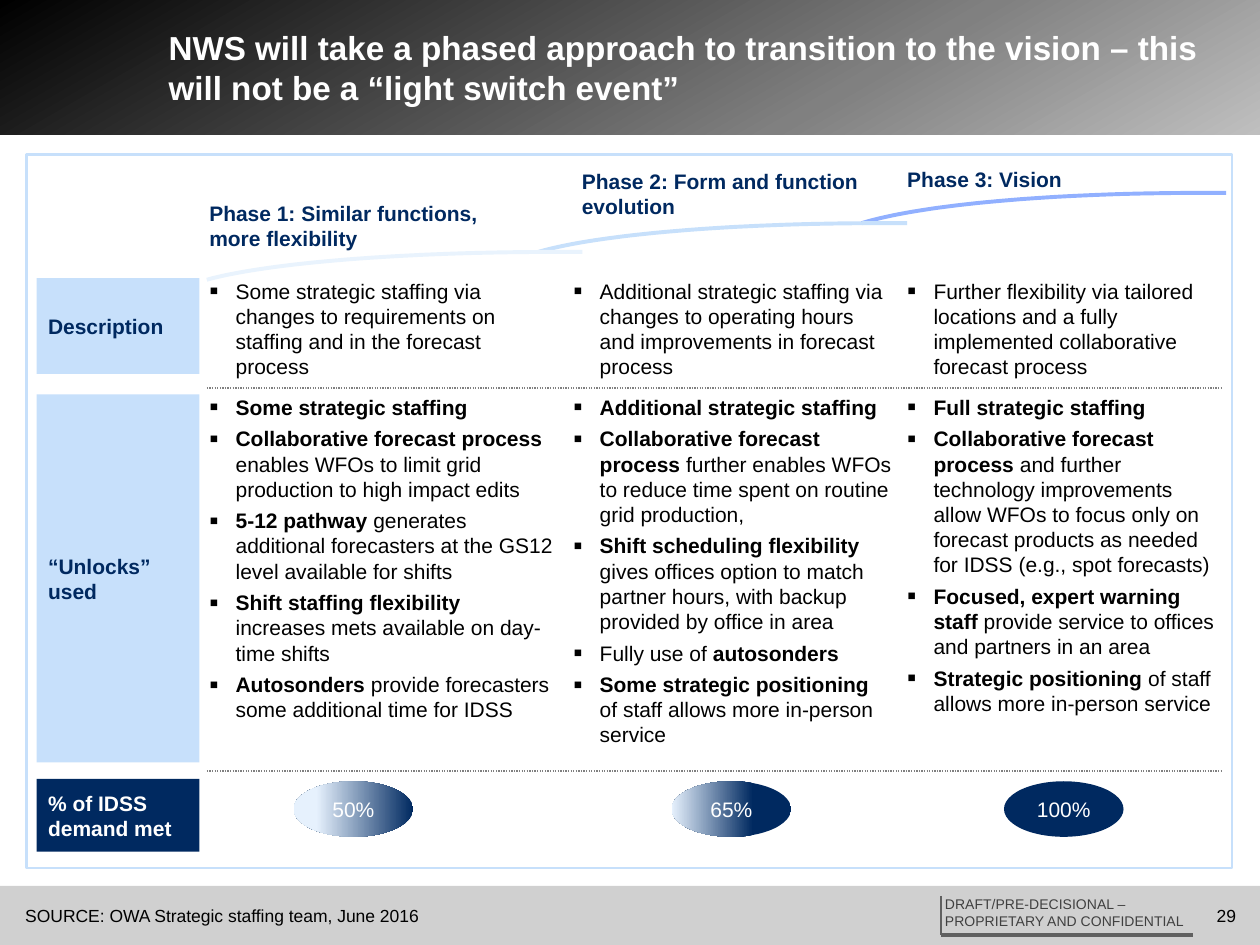
"""Builds the slide on the phased move to the NWS vision."""
from lxml import etree
from pptx import Presentation
from pptx.dml.color import RGBColor
from pptx.enum.dml import MSO_LINE
from pptx.enum.shapes import MSO_CONNECTOR, MSO_SHAPE
from pptx.enum.text import MSO_ANCHOR, MSO_AUTO_SIZE, PP_ALIGN
from pptx.oxml.ns import qn
from pptx.util import Cm, Pt

RECT, OVAL = MSO_SHAPE.RECTANGLE, MSO_SHAPE.OVAL
STRAIGHT, DOTS = MSO_CONNECTOR.STRAIGHT, MSO_LINE.ROUND_DOT
TOP, MID = MSO_ANCHOR.TOP, MSO_ANCHOR.MIDDLE
LEFT, CENTER, RIGHT = PP_ALIGN.LEFT, PP_ALIGN.CENTER, PP_ALIGN.RIGHT
FIXED = MSO_AUTO_SIZE.NONE

BLACK = RGBColor(0x00, 0x00, 0x00)
WHITE = RGBColor(0xFF, 0xFF, 0xFF)
NAVY = RGBColor(0x00, 0x29, 0x60)
SKY = RGBColor(0xC7, 0xE0, 0xFB)
PALE = RGBColor(0xE9, 0xF3, 0xFD)
ICE = RGBColor(0xE6, 0xF1, 0xFD)
BLUE = RGBColor(0x91, 0xB0, 0xFF)
GRAY = RGBColor(0x80, 0x80, 0x80)
SILVER = RGBColor(0xBF, 0xBF, 0xBF)
SMOKE = RGBColor(0xD0, 0xD0, 0xD0)
SLATE = RGBColor(0x60, 0x60, 0x60)
DARK = RGBColor(0x40, 0x40, 0x40)

COLS = [(4.22, 6.99), (11.56, 6.43), (18.29, 6.3)]
HEADS = [
    (4.22, 4.04, 6.99, ["|Phase 1: Similar functions,", "|more flexibility"]),
    (11.73, 3.4, 6.05, ["|Phase 2: Form and function", "|evolution"]),
    (18.29, 3.35, 6.3, ["|Phase 3: Vision"]),
]
CURVES = [
    (17.37, 4.5, 24.18, 3.89, BLUE),
    (10.85, 5.08, 17.75, 4.5, SKY),
    (4.17, 5.64, 11.2, 5.08, PALE),
]
TAGS = [
    (5.61, 1.93, "|Description", SKY, NAVY),
    (7.95, 7.42, "|“Unlocks” used", SKY, NAVY),
    (15.7, 1.47, "|% of IDSS demand met", NAVY, WHITE),
]
PLANS = [
    "Some strategic staffing via changes to requirements on staffing and in the forecast process",
    "Additional strategic staffing via changes to operating hours and improvements in forecast process",
    "Further flexibility via tailored locations and a fully implemented collaborative forecast process",
]
UNLOCKS = [
    ["|Some strategic staffing",
     "|Collaborative forecast process |enables WFOs to limit grid production to high impact edits",
     "|5-12 pathway |generates additional forecasters at the GS12 level available for shifts",
     "|Shift staffing flexibility |increases mets available on day-time shifts",
     "|Autosonders |provide forecasters some additional time for IDSS"],
    ["|Additional strategic staffing",
     "|Collaborative forecast process |further enables WFOs to reduce time spent on routine "
     "grid production,",
     "|Shift scheduling flexibility |gives offices option to match partner hours, with backup "
     "provided by office in area",
     "Fully use of |autosonders",
     "|Some strategic positioning |of staff allows more in-person service"],
    ["|Full strategic staffing",
     "|Collaborative forecast process |and further technology improvements allow WFOs to focus "
     "only on forecast products as needed for IDSS (e.g., spot forecasts)",
     "|Focused, expert warning staff |provide service to offices and partners in an area",
     "|Strategic positioning| of staff allows more in-person service"],
]
SHARES = [
    (5.92, "50%", [(0, NAVY), (81, ICE)]),
    (13.54, "65%", [(32, NAVY), (100, ICE)]),
    (20.24, "100%", NAVY),
]


class Deck:
    """Holds the style and the current slide."""

    font = "Arial"

    def __init__(self):
        self.prs = Presentation()
        self.prs.slide_width, self.prs.slide_height = Cm(25.4), Cm(19.05)
        self.slide = self.prs.slides.add_slide(self.prs.slide_layouts[4])
        self.shapes = self.slide.shapes
        self.slots = [p for p in self.slide.placeholders if p.placeholder_format.idx in range(1, 5)]

    def place(self, shape, box):
        """Moves a placeholder to a box and to the front."""
        shape.left, shape.top, shape.width, shape.height = [Cm(v) for v in box]
        self.shapes._spTree.append(shape._element)
        return shape

    def label(self, shape, paras, size, color, align=LEFT, anchor=TOP, inset=0, wrap=True, bullet=False):
        """Fills a shape with text, where each bar switches bold on or off."""
        frame = shape.text_frame
        frame.auto_size, frame.word_wrap, frame.vertical_anchor = FIXED, wrap, anchor
        frame.margin_left = frame.margin_right = Cm(inset)
        frame.margin_top = frame.margin_bottom = Cm(inset)
        for i, text in enumerate(paras):
            para = frame.add_paragraph() if i else frame.paragraphs[0]
            para.alignment = align
            para.space_before = Pt(3.6) if bullet and i else Pt(0)
            if bullet:
                self.mark(para)
            for n, part in enumerate(text.split("|")):
                if part:
                    run = para.add_run()
                    run.text = part
                    run.font.name, run.font.size = self.font, Pt(size)
                    run.font.bold = n % 2 == 1
                    run.font.color.rgb = color

    def mark(self, para):
        """Gives a paragraph a square bullet and a hanging indent."""
        props = para._p.get_or_add_pPr()
        props.set("marL", str(Cm(0.53)))
        props.set("indent", str(-Cm(0.53)))
        tint = etree.SubElement(props, qn("a:buClr"))
        etree.SubElement(tint, qn("a:srgbClr"), val=str(BLACK))
        etree.SubElement(props, qn("a:buSzPct"), val="125000")
        etree.SubElement(props, qn("a:buFont"), typeface=self.font)
        etree.SubElement(props, qn("a:buChar"), char="▪")

    def title(self, text, *box):
        """Sets the title."""
        self.label(self.place(self.shapes.title, box), [text], 19, WHITE, anchor=MID)

    def list(self, paras, *box):
        """Adds a bullet list, in a body placeholder while one is free."""
        if self.slots:
            shape = self.place(self.slots.pop(0), box)
        else:
            shape = self.shapes.add_textbox(*[Cm(v) for v in box])
        self.label(shape, paras, 12, BLACK, bullet=True)

    def text(self, paras, box, size, color, **style):
        """Adds a text box."""
        self.label(self.shapes.add_textbox(*[Cm(v) for v in box]), paras, size, color, **style)

    def shape(self, kind, box, fill, edge=None, angle=0):
        """Adds a preset shape with a plain fill or a list of gradient stops."""
        shape = self.shapes.add_shape(kind, *[Cm(v) for v in box])
        shape.shadow.inherit = False
        if isinstance(fill, list):
            shape.fill.gradient()
            shape.fill.gradient_angle = 360 - angle
            stops = shape._element.spPr.find(".//" + qn("a:gsLst"))
            stops.clear()
            for pos, color in fill:
                stop = etree.SubElement(stops, qn("a:gs"), pos=str(pos * 1000))
                etree.SubElement(stop, qn("a:srgbClr"), val=str(color))
        else:
            shape.fill.solid()
            shape.fill.fore_color.rgb = fill
        if edge is None:
            shape.line.fill.background()
        else:
            shape.line.color.rgb, shape.line.width = edge, Pt(1.5)
        return shape

    def line(self, ends, color, width, dash=None):
        """Adds a straight line."""
        line = self.shapes.add_connector(STRAIGHT, *[Cm(v) for v in ends])
        line.line.color.rgb, line.line.width = color, Pt(width)
        if dash:
            line.line.dash_style = dash
        etree.SubElement(line._element.spPr, qn("a:effectLst"))

    def curve(self, left, low, knee, high, color):
        """Adds a rising curve that ends in a short level stretch."""
        xs = [left, left + 0.18 * (knee - left), left + 0.57 * (knee - left), knee]
        ys = [low, low + 0.62 * (high - low), high, high]
        dots = []
        for t in [n / 32 for n in range(33)]:
            mix = [(1 - t) ** 3, 3 * t * (1 - t) ** 2, 3 * t * t * (1 - t), t ** 3]
            dots.append([Cm(sum(m * v for m, v in zip(mix, vals))) for vals in (xs, ys)])
        dots.append([Cm(knee + 0.54), Cm(high)])
        trace = self.shapes.build_freeform(*dots[0])
        trace.add_line_segments(dots[1:], close=False)
        shape = trace.convert_to_shape()
        shape.shadow.inherit = False
        shape.fill.background()
        shape.line.color.rgb, shape.line.width = color, Pt(2.25)


def main():
    """Draws the slide and saves it."""
    deck = Deck()
    deck.shape(RECT, (0, 0, 25.4, 2.72), [(0, BLACK), (67, GRAY), (100, SILVER)], angle=60)
    deck.shape(RECT, (0, 17.86, 25.4, 1.19), SMOKE)
    deck.text(["29"], (24.46, 18.24, 0.46, 0.43), 10, BLACK, align=RIGHT, anchor=MID, wrap=False)
    deck.text(["DRAFT/PRE-DECISIONAL –", "PROPRIETARY AND CONFIDENTIAL"],
              (18.97, 17.98, 5.08, 0.79), 8, DARK, inset=0.08, wrap=False)
    deck.line((18.97, 18.06, 18.97, 18.85), SLATE, 0.75)
    deck.line((18.97, 18.85, 24.05, 18.85), SLATE, 2)
    deck.shape(RECT, (0.53, 3.12, 24.31, 14.38), WHITE, SKY)
    deck.title("|NWS will take a phased approach to transition to the vision – this "
               "will not be a “light switch event”", 3.4, 0.53, 21.51, 1.65)
    for y in (7.82, 15.54):
        deck.line((4.17, y, 24.61, y), GRAY, 0.75, DOTS)
    for curve in CURVES:
        deck.curve(*curve)
    for x, y, wide, paras in HEADS:
        deck.text(paras, (x, y, wide, 0.51 * len(paras)), 12, NAVY)
    for y, high, text, fill, color in TAGS:
        tag = deck.shape(RECT, (0.74, y, 3.28, high), fill)
        deck.label(tag, [text], 12, color, anchor=MID, inset=0.23)
    for (x, wide), plan, paras in zip(COLS, PLANS, UNLOCKS):
        deck.list([plan], x, 5.61, wide, 2.08)
        deck.list(paras, x, 7.95, wide, 7)
    for x, text, fill in SHARES:
        oval = deck.shape(OVAL, (x, 15.75, 2.41, 1.12), fill, angle=180)
        deck.label(oval, [text], 12, WHITE, align=CENTER, anchor=MID)
    deck.text(["SOURCE: OWA Strategic staffing team, June 2016"],
              (0.51, 18.24, 17.4, 0.43), 10, BLACK, anchor=MID)
    deck.prs.save("out.pptx")


if __name__ == "__main__":
    main()
